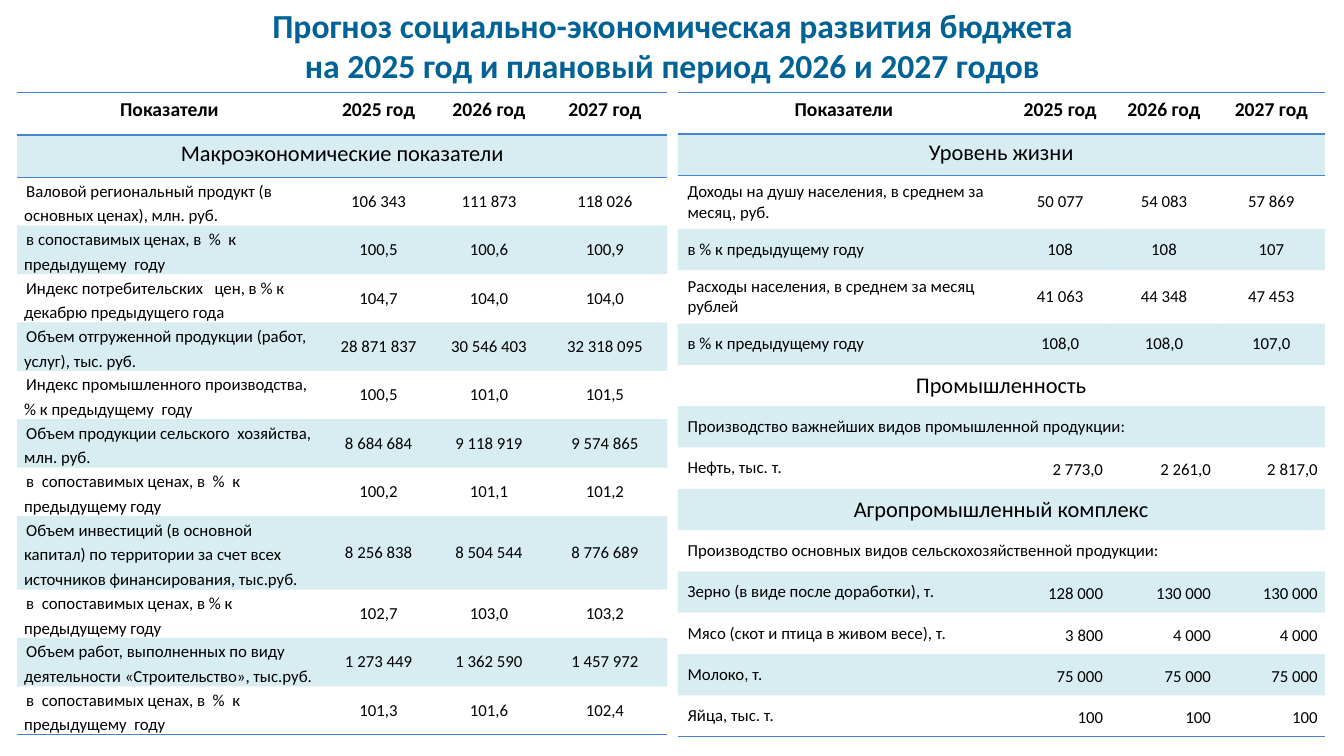
from lxml import etree
from pptx import Presentation
from pptx.dml.color import RGBColor
from pptx.enum.text import MSO_ANCHOR, PP_ALIGN
from pptx.oxml.ns import qn
from pptx.util import Pt

LEFT, CENTER, RIGHT = PP_ALIGN.LEFT, PP_ALIGN.CENTER, PP_ALIGN.RIGHT
TOP, MIDDLE = MSO_ANCHOR.TOP, MSO_ANCHOR.MIDDLE
PX = 9144  # 100 px to the inch
FONT = "Calibri"
TITLE_BLUE = RGBColor(0x01, 0x62, 0x96)
BLACK = RGBColor(0x00, 0x00, 0x00)
BAND = RGBColor(0x3E, 0xA6, 0xC2)
RULE = RGBColor(0x45, 0x84, 0xD3)
BAND_ALPHA = 20000
NO_STYLE = "{2D5ABB26-0587-4C30-8999-92F81FD0307C}"

TITLE = ["Прогноз социально-экономическая развития бюджета",
         "на 2025 год и плановый период 2026 и 2027 годов"]
HEADER = ("Показатели", "2025 год", "2026 год", "2027 год")

MACRO = [
    HEADER,
    ("Макроэкономические показатели",),
    ("Валовой региональный продукт (в основных ценах), млн. руб.", "106 343", "111 873", "118 026"),
    ("в сопоставимых ценах, в  %  к  предыдущему  году", "100,5", "100,6", "100,9"),
    ("Индекс потребительских   цен, в % к декабрю предыдущего года", "104,7", "104,0", "104,0"),
    ("Объем отгруженной продукции (работ, услуг), тыс. руб.",
     "28 871 837", "30 546 403", "32 318 095"),
    ("Индекс промышленного производства, % к предыдущему  году", "100,5", "101,0", "101,5"),
    ("Объем продукции сельского  хозяйства, млн. руб.", "8 684 684", "9 118 919", "9 574 865"),
    ("в  сопоставимых ценах, в  %  к  предыдущему году", "100,2", "101,1", "101,2"),
    ("Объем инвестиций (в основной капитал) по территории за счет всех источников "
     "финансирования, тыс.руб.", "8 256 838", "8 504 544", "8 776 689"),
    ("в  сопоставимых ценах, в % к предыдущему году", "102,7", "103,0", "103,2"),
    ("Объем работ, выполненных по виду деятельности «Строительство», тыс.руб.",
     "1 273 449", "1 362 590", "1 457 972"),
    ("в  сопоставимых ценах, в  %  к  предыдущему  году", "101,3", "101,6", "102,4"),
]
LIVING = [
    HEADER,
    ("Уровень жизни",),
    ("Доходы на душу населения, в среднем за месяц, руб.", "50 077", "54 083", "57 869"),
    ("в % к предыдущему году", "108", "108", "107"),
    ("Расходы населения, в среднем за месяц рублей", "41 063", "44 348", "47 453"),
    ("в % к предыдущему году", "108,0", "108,0", "107,0"),
    ("Промышленность",),
    ("Производство важнейших видов промышленной продукции:",),
    ("Нефть, тыс. т.", "2 773,0", "2 261,0", "2 817,0"),
    ("Агропромышленный комплекс",),
    ("Производство основных видов сельскохозяйственной продукции:",),
    ("Зерно (в виде после доработки), т.", "128 000", "130 000", "130 000"),
    ("Мясо (скот и птица в живом весе), т.", "3 800", "4 000", "4 000"),
    ("Молоко, т.", "75 000", "75 000", "75 000"),
    ("Яйца, тыс. т.", "100", "100", "100"),
]
TABLES = [
    dict(rows=MACRO, left=17, widths=(302, 113, 106, 124), height=48,
         special_heights={0: 42, 1: 42, 9: 73},
         label=dict(indent=2, spacing=1.2), tight_labels=True, output_from=len(MACRO)),
    dict(rows=LIVING, left=672, widths=(330, 99, 107, 106), height=41,
         special_heights={2: 53, 4: 53},
         label={}, tight_labels=False, output_from=8),
]
TABLE_TOP = 92


def write(frame, lines, size=12, bold=False, color=BLACK, align=LEFT, spacing=None, indent=0):
    for number, line in enumerate(lines):
        paragraph = frame.add_paragraph() if number else frame.paragraphs[0]
        paragraph.alignment = align
        if spacing:
            paragraph.line_spacing = spacing
        if indent:
            paragraph._p.get_or_add_pPr().set("indent", str(indent * PX))
        run = paragraph.add_run()
        run.text = line
        run.font.name, run.font.size = FONT, Pt(size)
        run.font.bold, run.font.color.rgb = bold, color


def add_rule(cell, side):
    """Draw a thin line on one side ("lnT" or "lnB") of a cell."""
    line = etree.SubElement(cell._tc.get_or_add_tcPr(), qn("a:" + side), w=str(Pt(1)))
    fill = etree.SubElement(line, qn("a:solidFill"))
    etree.SubElement(fill, qn("a:srgbClr"), val=str(RULE))


def paint(cell, banded):
    if not banded:
        cell.fill.background()
        return
    cell.fill.solid()
    cell.fill.fore_color.rgb = BAND
    color = cell._tc.tcPr.find(".//" + qn("a:solidFill") + "[last()]/" + qn("a:srgbClr"))
    for color in cell._tc.tcPr.findall(qn("a:solidFill") + "/" + qn("a:srgbClr")):
        etree.SubElement(color, qn("a:alpha"), val=str(BAND_ALPHA))


def add_indicators(slide, rows, left, widths, height, special_heights, label, tight_labels,
                   output_from):
    heights = [special_heights.get(r, height) for r in range(len(rows))]
    frame = slide.shapes.add_table(len(rows), len(widths), left * PX, TABLE_TOP * PX,
                                   sum(widths) * PX, sum(heights) * PX)
    table = frame.table
    table.first_row = table.horz_banding = False
    table._tbl.tblPr.find(qn("a:tableStyleId")).text = NO_STYLE
    for column, width in zip(table.columns, widths):
        column.width = width * PX
    for r, texts in enumerate(rows):
        table.rows[r].height = heights[r] * PX
        if len(texts) == 1:
            table.cell(r, 0).merge(table.cell(r, len(widths) - 1))
        for c in range(len(widths)):
            cell = table.cell(r, c)
            if r < 2:
                add_rule(cell, "lnT")
            if r < 2 or r == len(rows) - 1:
                add_rule(cell, "lnB")
            paint(cell, r % 2 == 1)
            cell.vertical_anchor = TOP if r < 2 else MIDDLE
            if c >= len(texts):
                continue
            if r > 1 and (c > 0 or tight_labels):
                cell.margin_left = cell.margin_right = 7 * PX
                cell.margin_top = cell.margin_bottom = 0
            if r == 0:
                style = dict(size=14, bold=True, align=CENTER)
            elif len(texts) == 1 and not texts[0].endswith(":"):
                style = dict(size=16, align=CENTER)
            elif c == 0:
                style = label
            elif r >= output_from:
                style = dict(align=RIGHT, spacing=1.2)
            else:
                style = dict(align=CENTER)
            write(cell.text_frame, [texts[c]], **style)


def main():
    deck = Presentation()
    deck.slide_width, deck.slide_height = 1333 * PX, 750 * PX
    slide = deck.slides.add_slide(deck.slide_layouts[6])
    title = slide.shapes.add_textbox(256 * PX, 0, 822 * PX, 91 * PX).text_frame
    title.word_wrap = False
    write(title, TITLE, size=24, bold=True, color=TITLE_BLUE, align=CENTER)
    for indicators in TABLES:
        add_indicators(slide, **indicators)
    deck.save("out.pptx")


if __name__ == "__main__":
    main()
